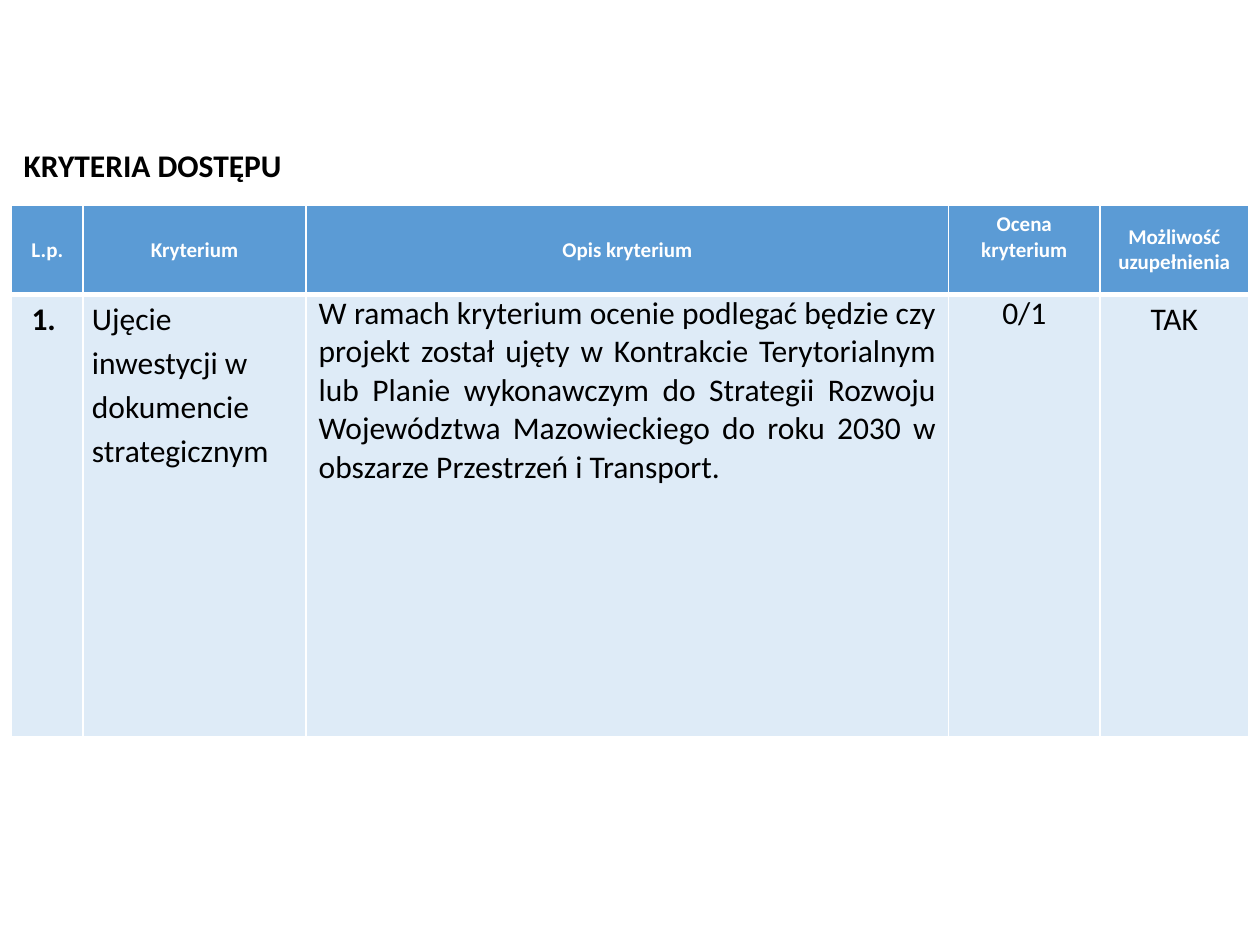
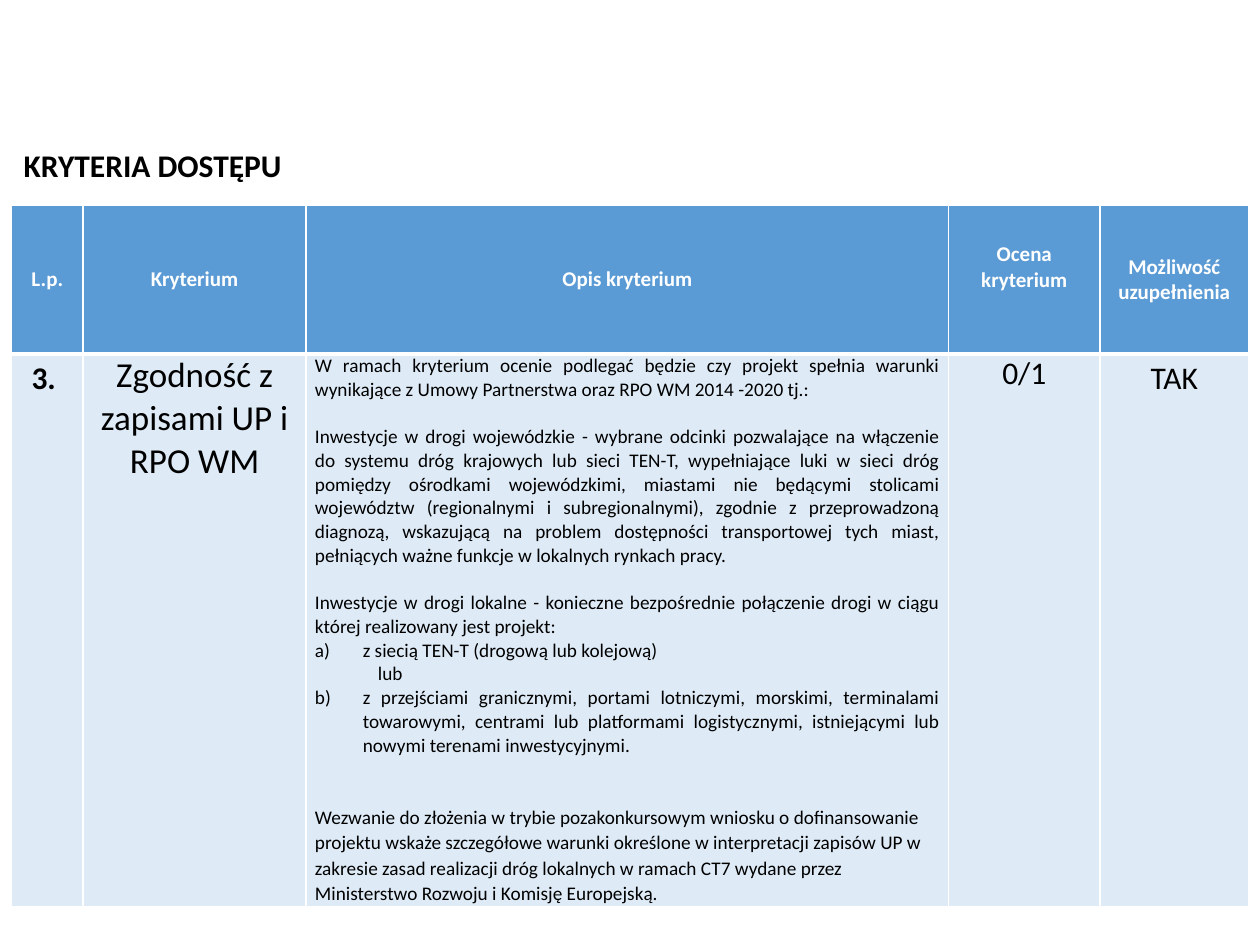
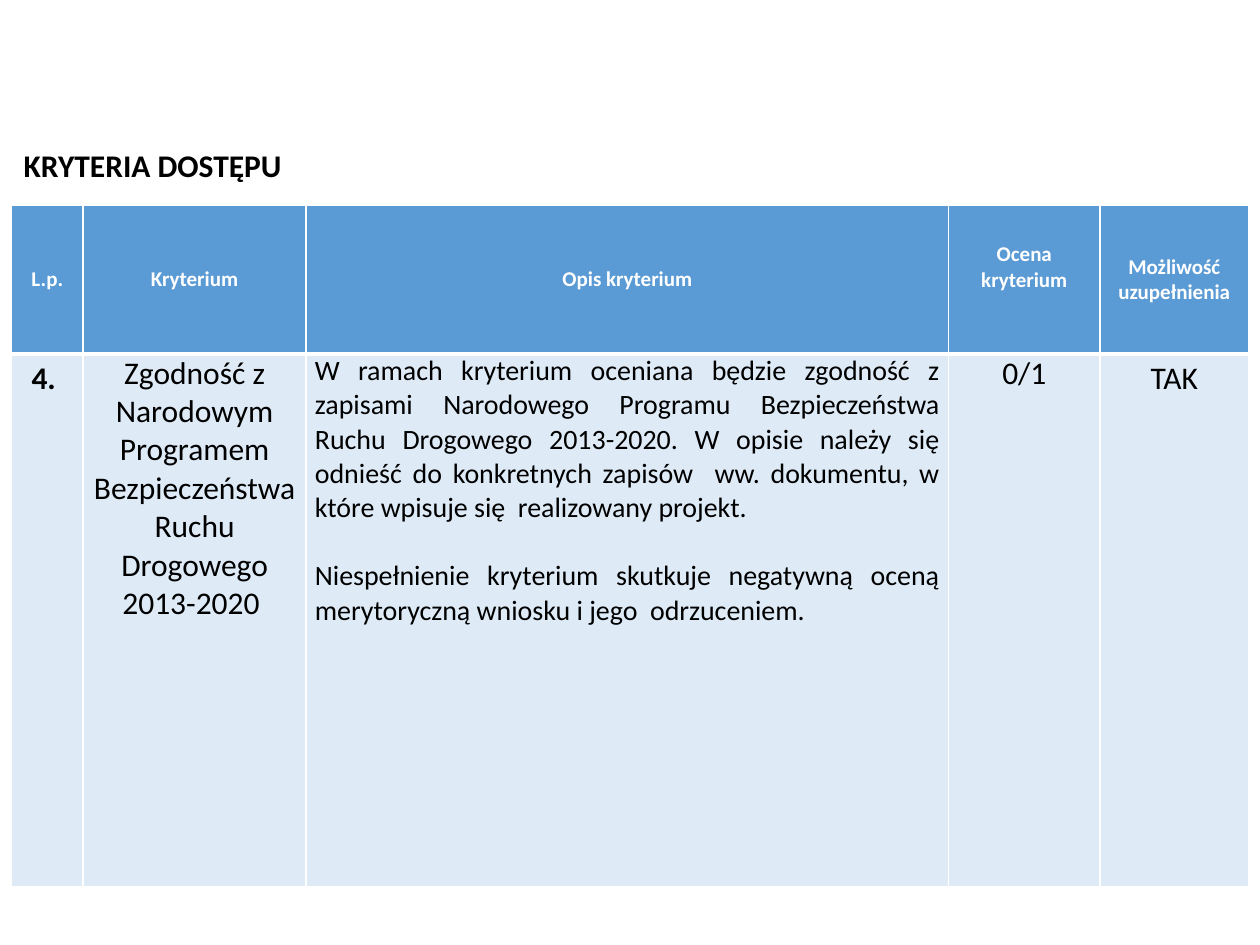
from dataclasses import dataclass

from lxml.etree import SubElement
from pptx import Presentation
from pptx.dml.color import RGBColor
from pptx.enum.text import MSO_ANCHOR, MSO_AUTO_SIZE, PP_ALIGN
from pptx.oxml.ns import qn
from pptx.slide import Slide
from pptx.table import _Cell
from pptx.text.text import TextFrame
from pptx.util import Inches, Pt

COLORS = {"header": "5B9BD5", "body": "DEEBF7", "rule": "FFFFFF",
          "header_text": "FFFFFF", "text": "000000"}
FONT = "Calibri"
LEFT = 0.09
TABLE_TOP = 1.63
COLUMN_WIDTHS = (0.57, 1.77, 5.1, 1.2, 1.18)
HEADINGS = ("L.p.", "Kryterium", "Opis kryterium", "Ocena kryterium",
            "Możliwość uzupełnienia")
SCORE_HEADING_BOTTOM = 0.25
THIN_RULE, THICK_RULE = 1, 3
LINE_FACTOR = 1.22
CENTER, JUSTIFY, START = PP_ALIGN.CENTER, PP_ALIGN.JUSTIFY, PP_ALIGN.LEFT


@dataclass(frozen=True)
class Para:
    text: str
    size: float = 18
    align: PP_ALIGN = CENTER
    bold: bool = False
    color: str = "text"
    line_spacing: float = 1.0
    lines_before: int = 0
    indent: float = 0
    number: int = 0


@dataclass(frozen=True)
class Criterion:
    number: str
    name: Para
    description: tuple[Para, ...]
    header_height: float
    body_height: float
    description_margin: float = 0.07


def detail(text: str, **options) -> Para:
    return Para(text, **{"size": 11, "align": JUSTIFY, **options})


CRITERIA = (
    Criterion(
        "1. ",
        Para("Ujęcie inwestycji w dokumencie strategicznym", align=START,
             line_spacing=1.15),
        (Para("W ramach kryterium ocenie podlegać będzie czy projekt został ujęty "
              "w Kontrakcie Terytorialnym lub Planie wykonawczym do Strategii "
              "Rozwoju Województwa Mazowieckiego do roku 2030 w obszarze "
              "Przestrzeń i Transport. ", align=JUSTIFY),),
        header_height=0.7, body_height=3.51, description_margin=0.1),
    Criterion(
        "3. ",
        Para("Zgodność z zapisami UP i RPO WM", size=20),
        (detail("W ramach kryterium ocenie podlegać będzie czy projekt spełnia "
                "warunki wynikające z Umowy Partnerstwa oraz RPO WM 2014 -2020 tj.:"),
         detail("Inwestycje w drogi wojewódzkie - wybrane odcinki pozwalające na "
                "włączenie do systemu dróg krajowych lub sieci TEN-T, wypełniające "
                "luki w sieci dróg pomiędzy ośrodkami wojewódzkimi, miastami nie "
                "będącymi stolicami województw (regionalnymi i subregionalnymi), "
                "zgodnie z przeprowadzoną diagnozą, wskazującą na problem "
                "dostępności transportowej tych miast, pełniących ważne funkcje w "
                "lokalnych rynkach pracy.", lines_before=1),
         detail("Inwestycje w drogi lokalne - konieczne bezpośrednie połączenie "
                "drogi w ciągu której realizowany jest projekt:", lines_before=1),
         detail("z siecią TEN-T (drogową lub kolejową) ", indent=0.38, number=1),
         detail("lub", indent=0.5),
         detail("z przejściami granicznymi, portami lotniczymi, morskimi, "
                "terminalami towarowymi, centrami lub platformami logistycznymi, "
                "istniejącymi lub nowymi terenami inwestycyjnymi.",
                indent=0.38, number=2),
         detail("Wezwanie do złożenia w trybie pozakonkursowym wniosku o "
                "dofinansowanie projektu wskaże szczegółowe warunki określone w "
                "interpretacji zapisów UP w zakresie zasad realizacji dróg "
                "lokalnych w ramach CT7 wydane przez Ministerstwo Rozwoju i "
                "Komisję Europejską.", align=START, line_spacing=1.07,
                lines_before=2)),
        header_height=1.18, body_height=4.39),
    Criterion(
        "4. ",
        Para("Zgodność z Narodowym Programem Bezpieczeństwa Ruchu Drogowego "
             "2013-2020 "),
        (detail("W ramach kryterium oceniana będzie zgodność z zapisami Narodowego "
                "Programu Bezpieczeństwa Ruchu Drogowego 2013-2020. W opisie należy "
                "się odnieść do konkretnych zapisów  ww. dokumentu, w które wpisuje "
                "się  realizowany projekt. ", size=16),
         detail("Niespełnienie kryterium skutkuje negatywną oceną merytoryczną "
                "wniosku i jego  odrzuceniem.", size=16, lines_before=1)),
        header_height=1.18, body_height=4.23),
)


def write(frame: TextFrame, paras: tuple[Para, ...]) -> None:
    for index, para in enumerate(paras):
        paragraph = frame.add_paragraph() if index else frame.paragraphs[0]
        paragraph.text = para.text
        paragraph.alignment = para.align
        paragraph.line_spacing = para.line_spacing
        if para.lines_before:
            paragraph.space_before = Pt(
                round(para.lines_before * para.size * LINE_FACTOR, 1))
        properties = paragraph._p.get_or_add_pPr()
        if para.indent:
            properties.set("marL", str(Inches(para.indent)))
        if para.number:
            properties.set("indent", str(-Inches(para.indent)))
            SubElement(properties, qn("a:buAutoNum"), type="alphaLcParenR",
                       startAt=str(para.number))
        font = paragraph.font
        font.name, font.size, font.bold = FONT, Pt(para.size), para.bold
        font.color.rgb = RGBColor.from_string(COLORS[para.color])


def paint(cell: _Cell, fill: str, top: float, bottom: float) -> None:
    """Give the cell its fill and white rules, widths in points."""
    properties = cell._tc.get_or_add_tcPr()
    widths = {"lnL": THIN_RULE, "lnR": THIN_RULE, "lnT": top, "lnB": bottom}
    for side, width in widths.items():
        line = SubElement(properties, qn(f"a:{side}"), w=str(Pt(width)))
        SubElement(SubElement(line, qn("a:solidFill")), qn("a:srgbClr"),
                   val=COLORS["rule"])
    cell.fill.solid()
    cell.fill.fore_color.rgb = RGBColor.from_string(COLORS[fill])


def add_criterion_table(slide: Slide, criterion: Criterion) -> None:
    heights = (criterion.header_height, criterion.body_height)
    table = slide.shapes.add_table(
        len(heights), len(COLUMN_WIDTHS), Inches(LEFT), Inches(TABLE_TOP),
        Inches(sum(COLUMN_WIDTHS)), Inches(sum(heights))).table
    for column, width in zip(table.columns, COLUMN_WIDTHS):
        column.width = Inches(width)
    for row, height in zip(table.rows, heights):
        row.height = Inches(height)

    for cell, heading in zip(table.rows[0].cells, HEADINGS):
        paint(cell, "header", THIN_RULE, THICK_RULE)
        cell.vertical_anchor = MSO_ANCHOR.MIDDLE
        write(cell.text_frame,
              (Para(heading, size=12, bold=True, color="header_text"),))
    table.cell(0, 3).margin_bottom = Inches(SCORE_HEADING_BOTTOM)

    contents = ((Para(criterion.number, bold=True, line_spacing=1.15),),
                (criterion.name,),
                criterion.description,
                (Para("0/1"),),
                (Para("TAK", line_spacing=1.15),))
    for cell, paras in zip(table.rows[1].cells, contents):
        paint(cell, "body", THICK_RULE, THIN_RULE)
        cell.margin_left = cell.margin_right = Inches(0.07)
        cell.margin_top = cell.margin_bottom = 0
        write(cell.text_frame, paras)
    description = table.cell(1, 2)
    description.margin_left = description.margin_right = Inches(
        criterion.description_margin)


def add_title(slide: Slide) -> None:
    frame = slide.shapes.add_textbox(
        Inches(LEFT), Inches(1.11), Inches(2.27), Inches(0.4)).text_frame
    frame.word_wrap = False
    frame.auto_size = MSO_AUTO_SIZE.SHAPE_TO_FIT_TEXT
    frame.vertical_anchor = MSO_ANCHOR.MIDDLE
    write(frame, (Para("KRYTERIA DOSTĘPU", align=START, bold=True),))


def main() -> None:
    deck = Presentation()
    deck.slide_width, deck.slide_height = Inches(10), Inches(7.5)
    for criterion in CRITERIA:
        slide = deck.slides.add_slide(deck.slide_layouts[6])
        add_criterion_table(slide, criterion)
        add_title(slide)
    deck.save("out.pptx")


if __name__ == "__main__":
    main()
